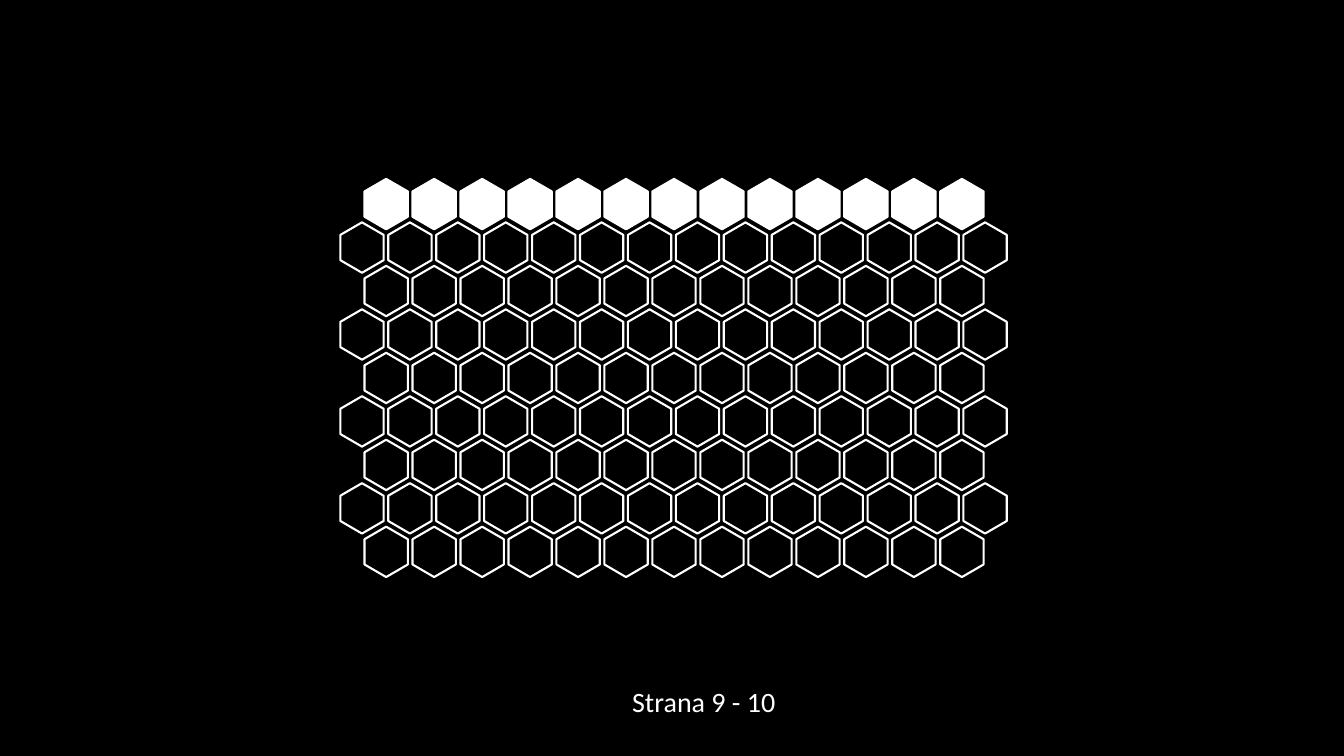
import pptx
import pptx.dml.color
import pptx.enum.shapes
import pptx.enum.text
import pptx.util

Inches = pptx.util.Inches
Pt = pptx.util.Pt
RGBColor = pptx.dml.color.RGBColor

THEME = {
    "black": RGBColor(0x00, 0x00, 0x00),
    "white": RGBColor(0xFF, 0xFF, 0xFF),
    "font": "Calibri",
    "label_size": Pt(20),
    "outline_width": Pt(1.5),
}

presentation = pptx.Presentation()
presentation.slide_width = Inches(13.33)
presentation.slide_height = Inches(7.5)
slide = presentation.slides.add_slide(presentation.slide_layouts[6])
slide.background.fill.solid()
slide.background.fill.fore_color.rgb = THEME["black"]

hexagon_width, hexagon_height = 0.5, 0.43
row_count = 9
first_top, last_top = 1.81, 5.26
row_pitch = (last_top - first_top) / (row_count - 1)
row_patterns = [
    {"count": 13, "first_left": 3.58, "last_left": 9.29},
    {"count": 14, "first_left": 3.34, "last_left": 9.52},
]

for row in range(row_count):
    pattern = row_patterns[row % 2]
    column_pitch = (pattern["last_left"] - pattern["first_left"]) / (pattern["count"] - 1)
    for column in range(pattern["count"]):
        hexagon = slide.shapes.add_shape(
            pptx.enum.shapes.MSO_SHAPE.HEXAGON,
            Inches(pattern["first_left"] + column * column_pitch),
            Inches(first_top + row * row_pitch),
            Inches(hexagon_width),
            Inches(hexagon_height),
        )
        hexagon.rotation = 90
        hexagon.adjustments[0] = 0.29
        hexagon.shadow.inherit = False
        hexagon.fill.solid()
        hexagon.fill.fore_color.rgb = THEME["white"] if row == 0 else THEME["black"]
        hexagon.line.color.rgb = THEME["white"]
        hexagon.line.width = THEME["outline_width"]

page_label = slide.shapes.add_textbox(Inches(5.91), Inches(6.74), Inches(1.88), Inches(0.44))
text_frame = page_label.text_frame
text_frame.word_wrap = True
text_frame.auto_size = pptx.enum.text.MSO_AUTO_SIZE.SHAPE_TO_FIT_TEXT
paragraph = text_frame.paragraphs[0]
paragraph.alignment = pptx.enum.text.PP_ALIGN.RIGHT
run = paragraph.add_run()
run.text = "Strana 9 - 10"
label_format = {"name": THEME["font"], "size": THEME["label_size"]}
for attribute, value in label_format.items():
    setattr(run.font, attribute, value)
run.font.color.rgb = THEME["white"]

presentation.save("out.pptx")
